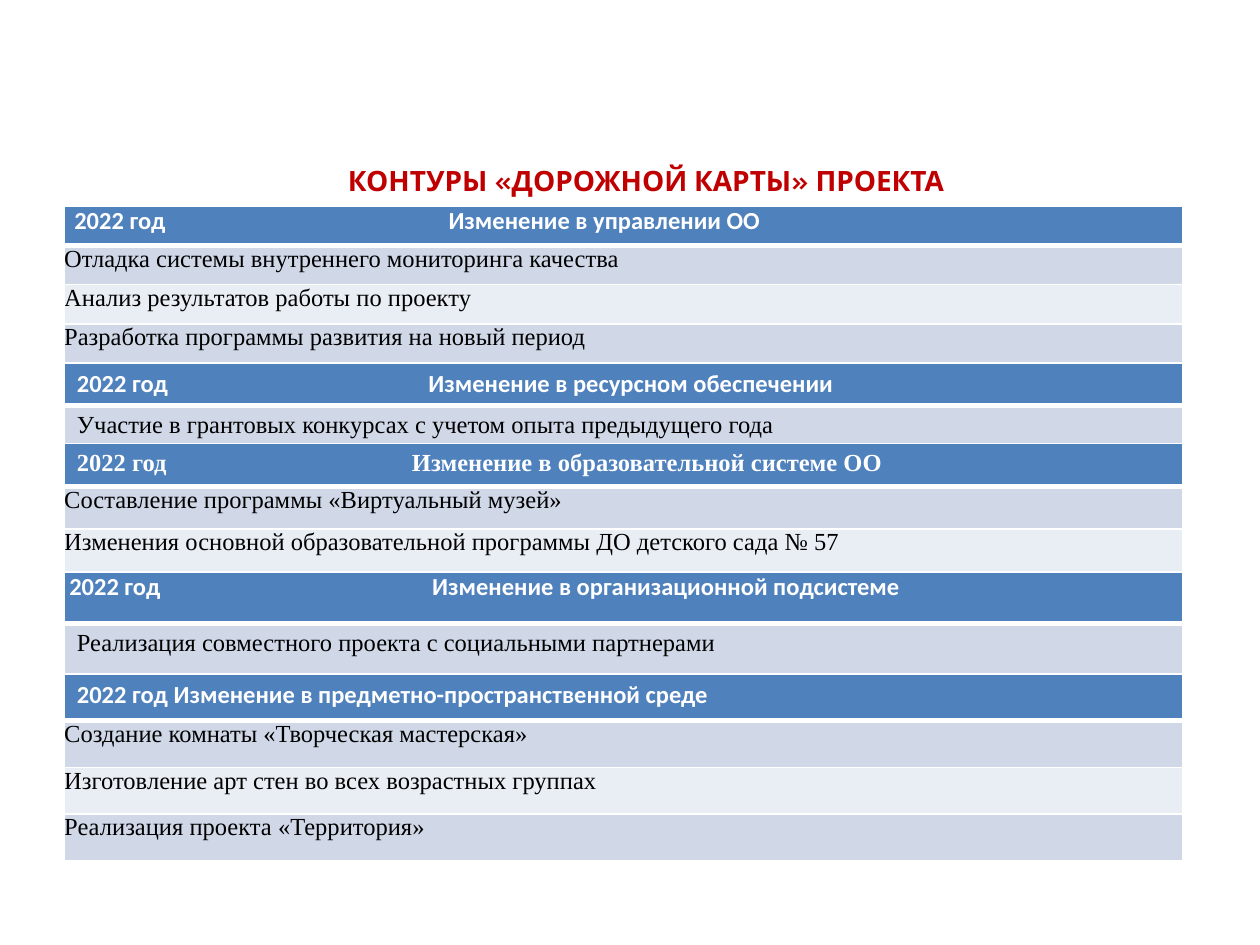
from dataclasses import dataclass

import pptx
import pptx.dml.color
import pptx.enum.text
import pptx.oxml
import pptx.oxml.ns
import pptx.util
from pptx.util import Inches

SERIF = "Times New Roman"
SANS = "Calibri"
WHITE = "FFFFFF"
HEADER_FILL = "4F81BD"
BAND_FILLS = ("D0D8E8", "E9EDF4")
LEFT, WIDTH = 0.51, 8.88
TIGHT = (0, 0)
PADDED = (0.1, 0.05)


@dataclass
class Section:
    top: float
    row_height: float
    heading: str
    items: tuple[str, ...]
    tab: float = 0
    header_inset: tuple[float, float] = PADDED
    item_inset: tuple[float, float] = TIGHT
    header_font: str = SANS


SECTIONS = (
    Section(1.64, 0.31, "2022 год\tИзменение в управлении ОО", (
        "Отладка системы внутреннего мониторинга качества",
        "Анализ результатов работы по проекту",
        "Разработка программы развития на новый период",
    ), tab=2.97, header_inset=(0.08, 0)),
    Section(2.88, 0.31, "2022 год\tИзменение в ресурсном обеспечении", (
        "Участие в грантовых конкурсах с учетом опыта предыдущего года",
    ), tab=2.79, item_inset=PADDED),
    Section(3.52, 0.34, "2022 год\tИзменение в образовательной системе ОО", (
        "Составление программы «Виртуальный музей»",
        "Изменения основной образовательной программы ДО детского сада № 57",
    ), tab=2.66, header_font=SERIF),
    Section(4.54, 0.41, "2022 год\tИзменение в организационной подсистеме", (
        "Реализация совместного проекта с социальными партнерами",
    ), tab=2.88, header_inset=(0.04, 0), item_inset=PADDED),
    Section(5.35, 0.37, "2022 год Изменение в предметно-пространственной среде", (
        "Создание комнаты «Творческая мастерская»",
        "Изготовление арт стен во всех возрастных группах",
        "Реализация проекта «Территория»",
    )),
)


def rgb(color: str) -> pptx.dml.color.RGBColor:
    return pptx.dml.color.RGBColor.from_string(color)


def apply(obj, values: dict) -> None:
    for name, value in values.items():
        setattr(obj, name, value)


def add_text(p, text: str, size: float, font: str, color: str, bold: bool) -> None:
    r = p.add_run()
    r.text = text
    apply(r.font, {"size": pptx.util.Pt(size), "name": font, "bold": bold})
    r.font.color.rgb = rgb(color)


def add_tab(p, position: float) -> None:
    ns = pptx.oxml.ns.nsdecls("a")
    p._p.get_or_add_pPr().append(pptx.oxml.parse_xml(
        f'<a:tabLst {ns}><a:tab pos="{Inches(position)}" algn="l"/></a:tabLst>'))


def set_borders(cell, bottom: float) -> None:
    ns = pptx.oxml.ns.nsdecls("a")
    tcPr = cell._tc.get_or_add_tcPr()
    for side, width in {"L": 1, "R": 1, "T": 1, "B": bottom}.items():
        tcPr.append(pptx.oxml.parse_xml(
            f'<a:ln{side} {ns} w="{pptx.util.Pt(width)}"><a:solidFill>'
            f'<a:srgbClr val="{WHITE}"/></a:solidFill></a:ln{side}>'))


def format_cell(cell, fill: str, inset: tuple[float, float], bottom: float) -> None:
    x, y = (Inches(v) for v in inset)
    apply(cell, {"margin_left": x, "margin_right": x, "margin_top": y, "margin_bottom": y})
    set_borders(cell, bottom)
    cell.fill.solid()
    cell.fill.fore_color.rgb = rgb(fill)


def add_section(s, section: Section) -> None:
    count = len(section.items) + 1
    table = s.shapes.add_table(
        count, 1, Inches(LEFT), Inches(section.top),
        Inches(WIDTH), Inches(section.row_height * count)).table
    for row in table.rows:
        row.height = Inches(section.row_height)

    header = table.cell(0, 0)
    format_cell(header, HEADER_FILL, section.header_inset, 3)
    p = header.text_frame.paragraphs[0]
    if section.tab:
        add_tab(p, section.tab)
    add_text(p, section.heading, 14, section.header_font, WHITE, True)

    for i, item in enumerate(section.items):
        cell = table.cell(i + 1, 0)
        format_cell(cell, BAND_FILLS[i % 2], section.item_inset, 1)
        add_text(cell.text_frame.paragraphs[0], item, 14, SERIF, "000000", False)


def add_title(s, text: str) -> None:
    sp = s.shapes.title
    apply(sp, {"left": Inches(1.03), "top": Inches(1.28),
               "width": Inches(8.2), "height": Inches(0.34)})
    tf = sp.text_frame
    apply(tf, {"word_wrap": True, "vertical_anchor": pptx.enum.text.MSO_ANCHOR.MIDDLE,
               "auto_size": pptx.enum.text.MSO_AUTO_SIZE.NONE})
    p = tf.paragraphs[0]
    apply(p, {"alignment": pptx.enum.text.PP_ALIGN.CENTER, "line_spacing": 0.9})
    add_text(p, text, 16, "Karla", "C00000", True)


def main() -> None:
    prs = pptx.Presentation()
    apply(prs, {"slide_width": Inches(10), "slide_height": Inches(7.5)})
    s = prs.slides.add_slide(prs.slide_layouts[5])
    add_title(s, "КОНТУРЫ «ДОРОЖНОЙ КАРТЫ» ПРОЕКТА")
    for section in SECTIONS:
        add_section(s, section)
    prs.save("out.pptx")


if __name__ == "__main__":
    main()
